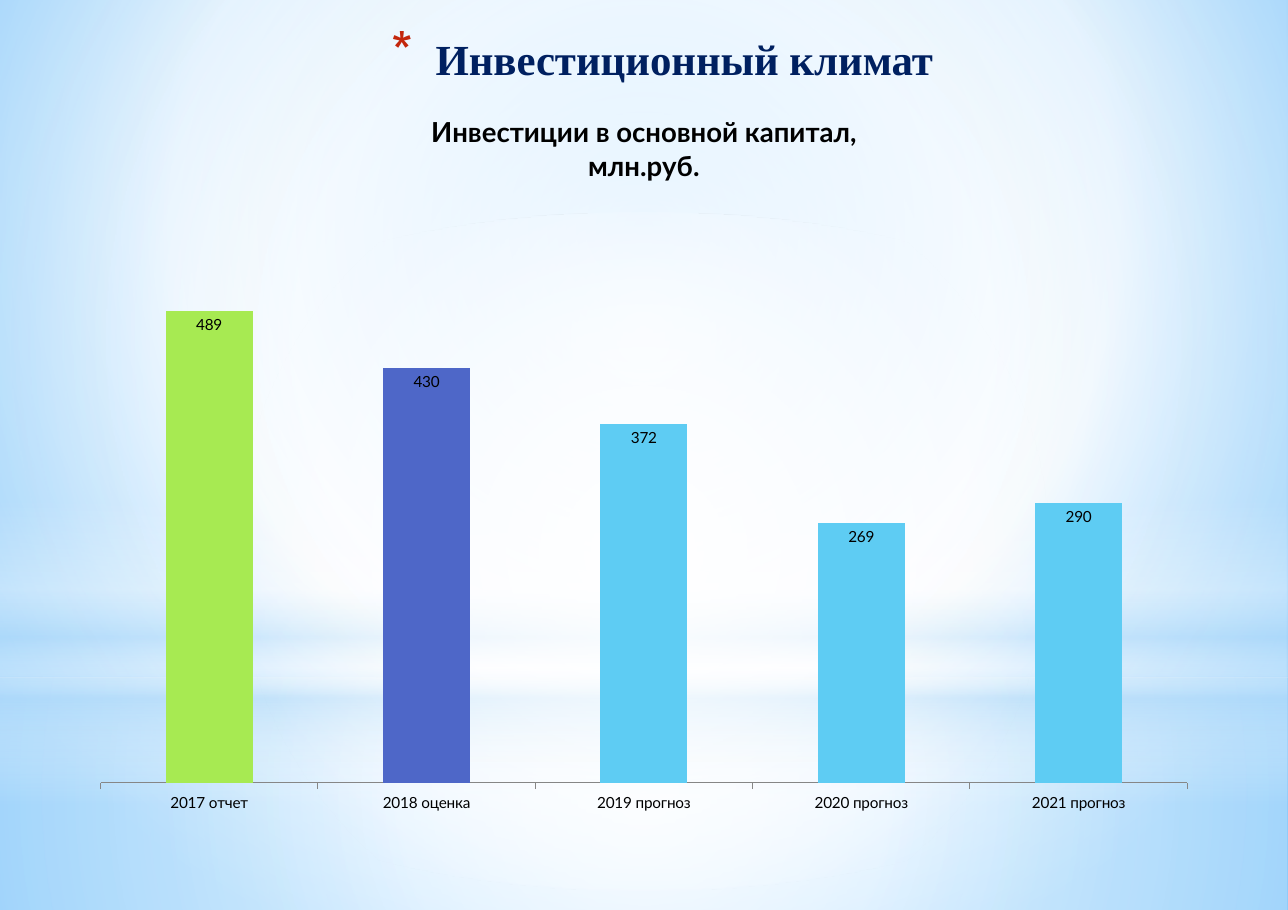
from typing import NamedTuple

from lxml import etree
from pptx import Presentation
from pptx import util as u
from pptx.chart.data import CategoryChartData
from pptx.dml.color import RGBColor
from pptx.enum import chart as ch, shapes, text
from pptx.oxml import parse_xml
from pptx.oxml.ns import nsdecls, qn


class Stop(NamedTuple):
    position: int
    color: str
    opacity: int = 100


class Glow(NamedTuple):
    """A background shape with a gradient; without a focus it runs downwards."""
    outline: shapes.MSO_SHAPE
    top: float
    height: float
    stops: list[Stop]
    focus: tuple[int, ...] | None = (50, 50, 50, 50)


class Investment(NamedTuple):
    year: str
    amount: int
    color: str


WIDTH, HEIGHT = 11.69, 8.26
WHITE, HAZE = "FFFFFF", "B4DCFA"
RECT, OVAL = shapes.MSO_SHAPE.RECTANGLE, shapes.MSO_SHAPE.OVAL
BACKDROP = [Stop(0, "9ED5FF"), Stop(60, WHITE), Stop(100, "5BB9FF")]
GLOWS = [
    Glow(RECT, 6.15, 2.11, [Stop(0, WHITE, 91), Stop(37, WHITE, 76), Stop(100, HAZE, 79)]),
    Glow(RECT, 0, 6.15, [Stop(0, WHITE, 89), Stop(48, WHITE, 62), Stop(100, HAZE, 79)]),
    Glow(RECT, 4.54, 2.75, [Stop(0, WHITE, 0), Stop(29, WHITE, 30), Stop(45, HAZE, 40),
                            Stop(55, WHITE, 26), Stop(65, HAZE, 60), Stop(100, WHITE, 0)], None),
    Glow(OVAL, 1.93, 6.15, [Stop(0, WHITE), Stop(56, WHITE, 0)]),
]
INVESTMENTS = [
    Investment("2017 отчет", 489, "A7EA52"),
    Investment("2018 оценка", 430, "4E67C8"),
    Investment("2019 прогноз", 372, "5ECCF3"),
    Investment("2020 прогноз", 269, "5ECCF3"),
    Investment("2021 прогноз", 290, "5ECCF3"),
]


def rgb(color: str) -> RGBColor:
    return RGBColor.from_string(color)


def set_values(target, values: dict) -> None:
    for name, value in values.items():
        setattr(target, name, value)


def set_font(font, color: str, **values) -> None:
    set_values(font, values)
    font.color.rgb = rgb(color)


def set_gradient(fill, properties, stops: list[Stop], focus: tuple[int, ...] | None) -> None:
    fill.gradient()
    gradient = properties.find(qn("a:gradFill"))
    marks = "".join(
        f'<a:gs pos="{s.position * 1000}"><a:srgbClr val="{s.color}">'
        f'<a:alpha val="{s.opacity * 1000}"/></a:srgbClr></a:gs>' for s in stops)
    if focus:
        sides = " ".join(f'{side}="{value * 1000}"' for side, value in zip("ltrb", focus))
        direction = f'<a:path path="circle"><a:fillToRect {sides}/></a:path>'
    else:
        direction = '<a:lin ang="5400000" scaled="0"/>'
    gradient.getparent().replace(gradient, parse_xml(
        f'<a:gradFill {nsdecls("a")} rotWithShape="1"><a:gsLst>{marks}</a:gsLst>'
        f'{direction}</a:gradFill>'))


def draw_glow(slide, glow: Glow) -> None:
    shape = slide.shapes.add_shape(glow.outline, 0, u.Inches(glow.top),
                                   u.Inches(WIDTH), u.Inches(glow.height))
    shape.shadow.inherit = False
    shape.line.fill.background()
    set_gradient(shape.fill, shape._element.spPr, glow.stops, glow.focus)


def write_heading(slide) -> None:
    heading = slide.shapes.title
    slide.shapes._spTree.append(heading._element)  # in front of the glows
    set_values(heading, dict(left=u.Inches(0.67), top=u.Inches(0.25),
                             width=u.Inches(10.68), height=u.Inches(0.72)))
    set_values(heading.text_frame, dict(text="Инвестиционный климат", word_wrap=True,
                                        vertical_anchor=text.MSO_ANCHOR.TOP))
    line = heading.text_frame.paragraphs[0]
    line.alignment = text.PP_ALIGN.CENTER
    set_font(line.runs[0].font, "002060", name="Times New Roman", size=u.Pt(28), bold=True)
    # Red asterisk bullet
    bullet = line._p.get_or_add_pPr()
    bullet.set("marL", str(u.Inches(0.4)))
    bullet.set("indent", str(u.Inches(-0.4)))
    color = etree.SubElement(bullet, qn("a:buClr"))
    etree.SubElement(color, qn("a:srgbClr"), val="C3260C")
    etree.SubElement(bullet, qn("a:buSzPct"), val="128000")
    etree.SubElement(bullet, qn("a:buChar"), char="*")


def place_plot(chart, x: float, y: float, w: float, h: float) -> None:
    plot_area = chart._chartSpace.chart.plotArea
    for layout in plot_area.findall(qn("c:layout")):
        plot_area.remove(layout)
    values = dict(layoutTarget="inner", xMode="edge", yMode="edge", x=x, y=y, w=w, h=h)
    items = "".join(f'<c:{name} val="{value}"/>' for name, value in values.items())
    plot_area.insert(0, parse_xml(
        f'<c:layout {nsdecls("c")}><c:manualLayout>{items}</c:manualLayout></c:layout>'))


def draw_investments(slide) -> None:
    data = CategoryChartData(number_format="0")
    data.categories = [item.year for item in INVESTMENTS]
    data.add_series("Series 1", [item.amount for item in INVESTMENTS])
    chart = slide.shapes.add_chart(
        ch.XL_CHART_TYPE.COLUMN_STACKED, u.Inches(0.76), u.Inches(0.81),
        u.Inches(10.17), u.Inches(6.64), data).chart
    set_font(chart.font, "000000", name="Lato", size=u.Pt(10))
    chart.has_legend = False
    place_plot(chart, 0.015, 0.157, 0.97, 0.791)

    # Chart title
    caption = chart.chart_title.text_frame
    caption.text = "Инвестиции в основной капитал,\nмлн.руб."
    for line in caption.paragraphs:
        set_font(line.runs[0].font, "000000", name="Lato", size=u.Pt(18), bold=True)
    chart.chart_title.include_in_layout = False

    # Axes
    set_values(chart.value_axis, dict(visible=False, has_major_gridlines=False,
                                      minimum_scale=0, maximum_scale=600))
    years = chart.category_axis
    set_values(years, dict(major_tick_mark=ch.XL_TICK_MARK.OUTSIDE, has_major_gridlines=False))
    years.format.line.color.rgb = rgb("868686")
    years.format.line.width = u.Pt(0.75)

    # Columns and their values
    plot = chart.plots[0]
    set_values(plot, dict(gap_width=150, overlap=100, vary_by_categories=False,
                          has_data_labels=True))
    set_values(plot.data_labels, dict(show_value=True, number_format="0",
                                      number_format_is_linked=False,
                                      position=ch.XL_LABEL_POSITION.INSIDE_END))
    columns = plot.series[0]
    for index, item in enumerate(INVESTMENTS):
        fill = columns.points[index].format.fill
        fill.solid()
        fill.fore_color.rgb = rgb(item.color)


def main() -> None:
    deck = Presentation()
    set_values(deck, dict(slide_width=u.Inches(WIDTH), slide_height=u.Inches(HEIGHT)))
    slide = deck.slides.add_slide(deck.slide_layouts[5])

    # Background
    backdrop = slide.background.fill
    set_gradient(backdrop, slide._element.cSld.bg.bgPr, BACKDROP, (20, 10, 20, 60))
    for glow in GLOWS:
        draw_glow(slide, glow)

    # Content
    write_heading(slide)
    draw_investments(slide)
    deck.save("out.pptx")


if __name__ == "__main__":
    main()
